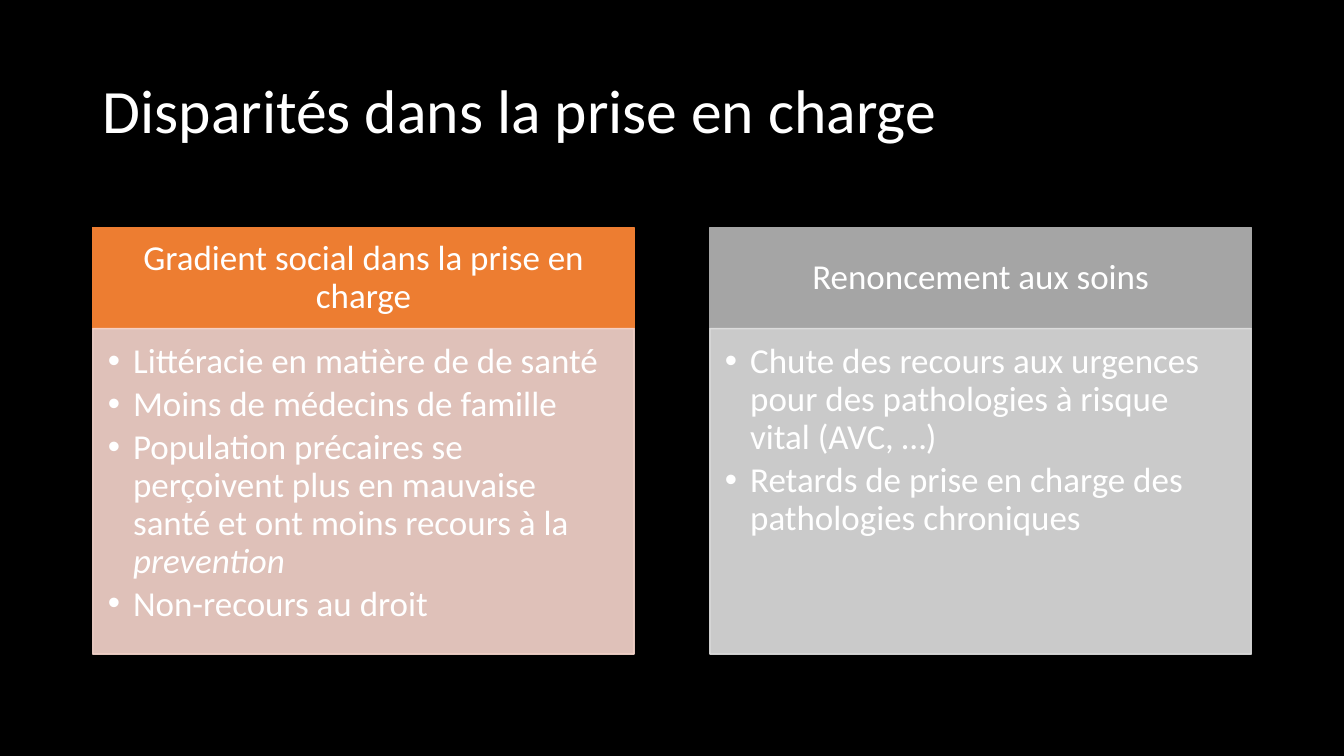
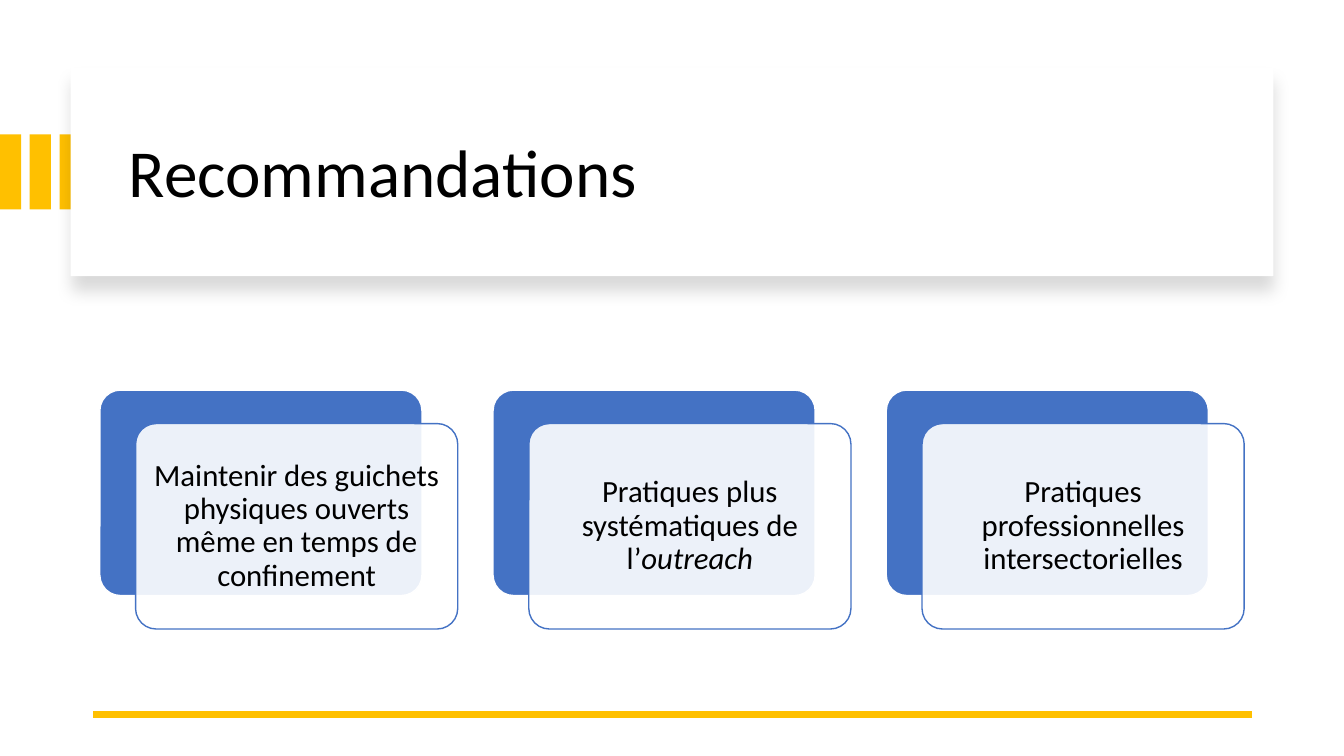
from dataclasses import dataclass

from lxml.etree import SubElement
from pptx import Presentation
from pptx.dml.color import RGBColor
from pptx.enum.shapes import MSO_CONNECTOR as Connector, MSO_SHAPE as Preset
from pptx.enum.text import MSO_ANCHOR as Anchor, MSO_AUTO_SIZE as AutoSize, PP_ALIGN as Align
from pptx.oxml.ns import qn
from pptx.util import Inches, Pt


@dataclass(frozen=True)
class Theme:
    """Colours, font and type sizes of the deck."""
    font: str = "Calibri"
    black: str = "000000"
    white: str = "FFFFFF"
    orange: str = "ED7D31"
    pale_orange: str = "F8D7CE"
    grey: str = "A5A5A5"
    pale_grey: str = "E1E1E1"
    gold: str = "FFC000"
    blue: str = "4472C4"
    title: int = 44
    large_title: int = 48
    panel: int = 25
    card: int = 22
    line_spacing: float = 0.9
    veil: int = 90


@dataclass(frozen=True)
class Box:
    """A rectangle in inches."""
    left: float
    top: float
    width: float
    height: float

    def emu(self):
        """Return left, top, width and height as lengths."""
        return [Inches(side) for side in (self.left, self.top, self.width, self.height)]

    def share(self, x, y, width, height):
        """Return the area given as shares of this box."""
        return Box(self.left + x * self.width, self.top + y * self.height,
                   width * self.width, height * self.height)

    def split(self, count, width):
        """Return columns of one width with equal gaps."""
        pitch = (self.width - width) / (count - 1)
        return [Box(self.left + index * pitch, self.top, width, self.height)
                for index in range(count)]


THEME = Theme()
COMPARISON, TITLE_ONLY = 4, 5
SLIDE = Box(0, 0, 13.33, 7.5)


def rgb(value):
    """Turn a hex value into a colour."""
    return RGBColor.from_string(value)


def paint(shape, fill, line=None, fill_alpha=100, line_alpha=100):
    """Fill and outline a shape, with opacity in percent."""
    shape.fill.solid()
    shape.fill.fore_color.rgb = rgb(fill)
    if line:
        shape.line.color.rgb = rgb(line)
        shape.line.width = Pt(1)
    else:
        shape.line.fill.background()
    properties = shape.element.spPr
    for parent, alpha in ((properties, fill_alpha), (properties.find(qn("a:ln")), line_alpha)):
        if alpha < 100:
            colour = parent.find(qn("a:solidFill")).find(qn("a:srgbClr"))
            SubElement(colour, qn("a:alpha"), val=str(alpha * 1000))


def add_preset(slide, box, preset, **colours):
    """Add a painted preset shape without shadow."""
    shape = slide.shapes.add_shape(preset, *box.emu())
    shape.shadow.inherit = False
    paint(shape, **colours)
    return shape


def write(shape, texts, size, colour, align=Align.LEFT, anchor=Anchor.MIDDLE,
          insets=(0.1, 0.05, 0.1, 0.05), after=0, hanging=0):
    """Write paragraphs, with the words between asterisks in italics."""
    frame = shape.text_frame
    frame.word_wrap, frame.auto_size, frame.vertical_anchor = True, AutoSize.NONE, anchor
    frame.margin_left, frame.margin_top, frame.margin_right, frame.margin_bottom = map(Inches, insets)
    for index, text in enumerate(texts):
        paragraph = frame.add_paragraph() if index else frame.paragraphs[0]
        for position, words in enumerate(text.split("*")):
            if words:
                run = paragraph.add_run()
                run.text = words
                if position % 2:
                    run.font.italic = True
        paragraph.alignment, paragraph.line_spacing = align, THEME.line_spacing
        paragraph.space_before, paragraph.space_after = Pt(0), Pt(after)
        font = paragraph.font
        font.name, font.size, font.bold = THEME.font, Pt(size), False
        font.color.rgb = rgb(colour)
        if hanging:
            properties = paragraph._p.get_or_add_pPr()
            properties.set("marL", str(Inches(hanging)))
            properties.set("indent", str(-Inches(hanging)))


def place(shape, box):
    """Move a placeholder to a box."""
    shape.left, shape.top, shape.width, shape.height = box.emu()


def add_slide(presentation, layout, background):
    """Add a slide with a plain background."""
    slide = presentation.slides.add_slide(presentation.slide_layouts[layout])
    slide.background.fill.solid()
    slide.background.fill.fore_color.rgb = rgb(background)
    return slide


def set_title(slide, box, text, size, colour):
    """Set the title in front of the shapes placed so far."""
    title = slide.shapes.title
    slide.shapes.element.append(title.element)
    place(title, box)
    write(title, [text], size, colour)


def fill_panel(header, body, box, heading, points, colour, pale):
    """Lay out a heading band over a bullet list."""
    band = 1 / box.height
    place(header, box.share(0, 0, 1, band))
    paint(header, colour, colour)
    write(header, [heading], THEME.panel, THEME.white, Align.CENTER,
          insets=(0.19, 0.11, 0.19, 0.11))
    place(body, box.share(0, band, 1, 1 - band))
    paint(body, pale, pale, THEME.veil, THEME.veil)
    write(body, points, THEME.panel, THEME.white, anchor=Anchor.TOP,
          insets=(0.15, 0.15, 0.19, 0.22), after=3.75, hanging=0.25)


def add_title_card(slide, box, text):
    """Add a raised title card with stripes at the slide edge."""
    stripes = Box(0, box.top + 0.32 * box.height, 0.8, 0.36 * box.height)
    for stripe in stripes.split(3, 0.21):
        add_preset(slide, stripe, Preset.RECTANGLE, fill=THEME.gold)
    card = add_preset(slide, box, Preset.RECTANGLE, fill=THEME.white)
    effects = card.element.spPr.find(qn("a:effectLst"))
    shadow = SubElement(effects, qn("a:outerShdw"), blurRad=str(Pt(11)), dist=str(Pt(10)),
                        dir="5400000", algn="t", rotWithShape="0")
    colour = SubElement(shadow, qn("a:srgbClr"), val=THEME.black)
    SubElement(colour, qn("a:alpha"), val="15000")
    set_title(slide, box.share(0.04, 0.11, 0.93, 0.82), text, THEME.large_title, THEME.black)


def add_card(slide, box, text):
    """Add a blue card with an offset translucent card over it."""
    width, height = 0.9, 0.86
    back = add_preset(slide, box.share(0, 0, width, height), Preset.ROUNDED_RECTANGLE,
                      fill=THEME.blue, line=THEME.white)
    front = add_preset(slide, box.share(1 - width, 1 - height, width, height),
                       Preset.ROUNDED_RECTANGLE, fill=THEME.white, line=THEME.blue,
                       fill_alpha=THEME.veil)
    for shape in (back, front):
        shape.adjustments[0] = 0.1
    write(front, [text], THEME.card, THEME.black, Align.CENTER, insets=(0.09,) * 4)


def add_rule(slide, box):
    """Add a gold rule along the top of a box."""
    left, top, width, _ = box.emu()
    rule = slide.shapes.add_connector(Connector.STRAIGHT, left + width, top, left, top)
    rule.line.color.rgb = rgb(THEME.gold)
    rule.line.width = Pt(4.5)
    SubElement(rule.element.spPr, qn("a:effectLst"))


def build_disparities(presentation):
    """Build the comparison slide."""
    slide = add_slide(presentation, COMPARISON, THEME.black)
    set_title(slide, Box(0.92, 0.4, 11.5, 1.45), "Disparités dans la prise en charge",
              THEME.title, THEME.white)
    panels = (
        ("Gradient social dans la prise en charge",
         ["Littéracie en matière de de santé",
          "Moins de médecins de famille",
          "Population précaires se perçoivent plus en mauvaise santé et ont moins recours à la "
          "*prevention*",
          "Non-recours au droit"],
         THEME.orange, THEME.pale_orange),
        ("Renoncement aux soins",
         ["Chute des recours aux urgences pour des pathologies à risque vital (AVC, …)",
          "Retards de prise en charge des pathologies chroniques"],
         THEME.grey, THEME.pale_grey),
    )
    holders = {holder.placeholder_format.idx: holder for holder in slide.placeholders}
    boxes = Box(0.92, 2.26, 11.49, 4.23).split(len(panels), 5.37)
    for index, (box, panel) in enumerate(zip(boxes, panels)):
        fill_panel(holders[2 * index + 1], holders[2 * index + 2], box, *panel)


def build_recommendations(presentation):
    """Build the slide of recommendation cards."""
    slide = add_slide(presentation, TITLE_ONLY, THEME.white)
    add_title_card(slide, Box(0.7, 0.67, 11.93, 2.07), "Recommandations")
    add_rule(slide, Box(0.92, 7.09, 11.5, 0))
    texts = (
        "Maintenir des guichets physiques ouverts même en temps de confinement",
        "Pratiques plus systématiques de l’*outreach*",
        "Pratiques professionnelles intersectorielles",
    )
    boxes = Box(0.99, 3.87, 11.35, 2.37).split(len(texts), 3.55)
    for box, text in zip(boxes, texts):
        add_card(slide, box, text)


def main():
    """Build and save the deck."""
    presentation = Presentation()
    _, _, presentation.slide_width, presentation.slide_height = SLIDE.emu()
    build_disparities(presentation)
    build_recommendations(presentation)
    presentation.save("out.pptx")


if __name__ == "__main__":
    main()
